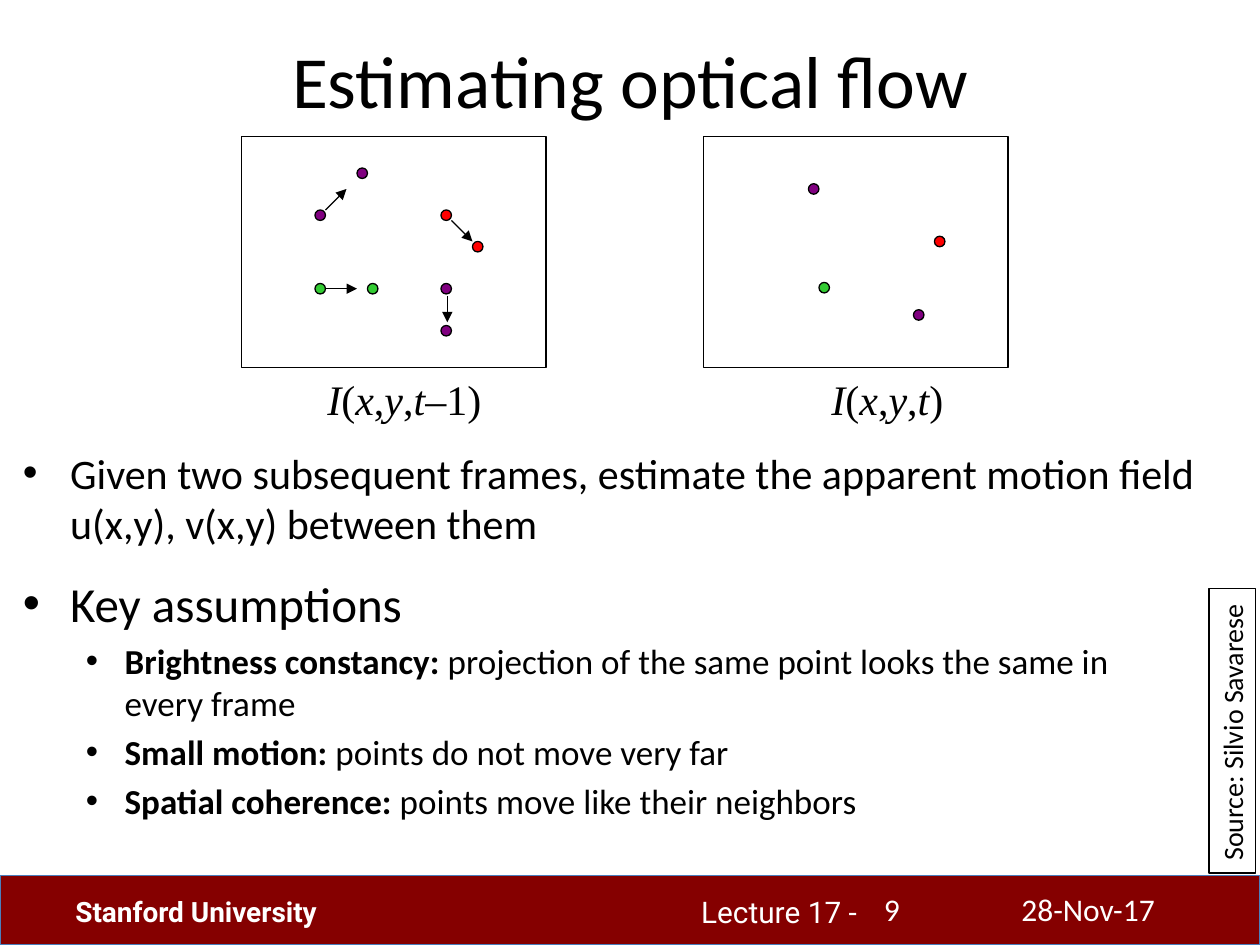
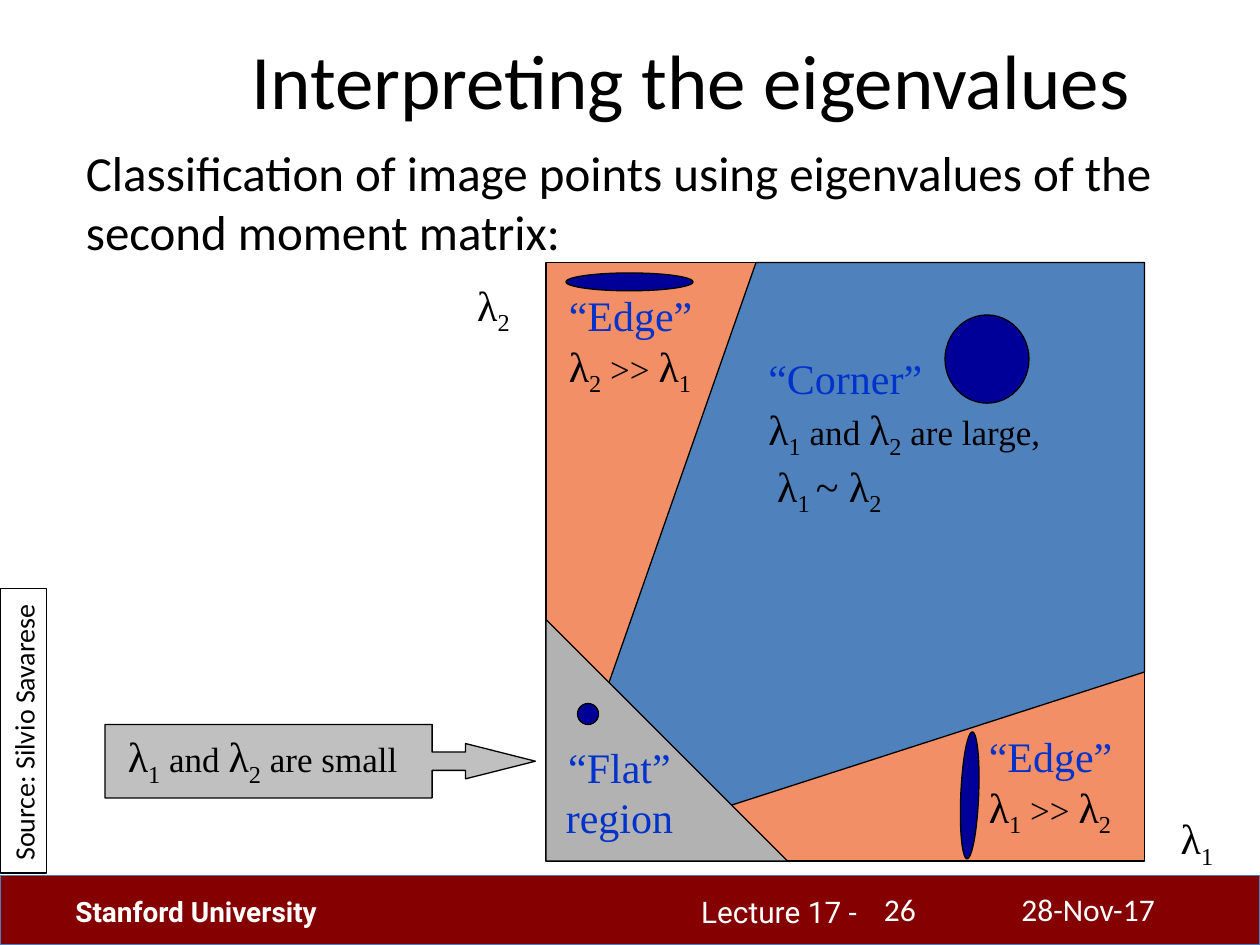
from dataclasses import dataclass
from itertools import groupby

from lxml.etree import SubElement
from pptx import Presentation
from pptx.dml.color import RGBColor
from pptx.enum.shapes import MSO_CONNECTOR as Connector, MSO_SHAPE as Preset
from pptx.enum.text import MSO_ANCHOR as Anchor, MSO_AUTO_SIZE as AutoSize, PP_ALIGN as Align
from pptx.oxml.ns import qn
from pptx.shapes.autoshape import Shape
from pptx.slide import Slide
from pptx.util import Emu, Pt

SCALE = 7620
WIDTH, HEIGHT = 1200, 900

BLACK, WHITE = "000000", "FFFFFF"
FOOTER_RED, FOOTER_EDGE = "850000", "4B7EBC"
PURPLE, RED, GREEN = "800080", "FF0000", "33CC33"
EDGE_ORANGE, CORNER_BLUE, FLAT_GRAY, CALLOUT_GRAY = "F38F67", "4F81BD", "B2B2B2", "C0C0C0"
ELLIPSE_NAVY, REGION_BLUE = "000099", "0033CC"
SANS, FOOTER_FONT, SERIF = "Calibri", "Roboto", "Times New Roman"


@dataclass(frozen=True)
class Box:
    left: int
    top: int
    width: int
    height: int

    def emu(self) -> tuple[Emu, ...]:
        return tuple(px(v) for v in (self.left, self.top, self.width, self.height))


@dataclass(frozen=True)
class Run:
    text: str
    size: float = 24
    color: str = BLACK
    font: str = SANS
    bold: bool = False
    italic: bool = False
    subscript: bool = False


@dataclass(frozen=True)
class Para:
    runs: list[Run]
    align: Align = Align.LEFT
    before: float = 0
    level: int = 0
    margin: int = 0
    hanging: int = 0


@dataclass(frozen=True)
class Dot:
    left: int
    top: int
    color: str


@dataclass(frozen=True)
class Arrow:
    start: tuple[int, int]
    end: tuple[int, int]


@dataclass(frozen=True)
class Ellipse:
    box: Box
    rotation: float = 0


@dataclass(frozen=True)
class Note:
    box: Box
    runs: list[Run]
    align: Align = Align.LEFT


FRAMES = [Box(230, 130, 290, 220), Box(670, 130, 290, 220)]
DOTS = [
    Dot(300, 200, PURPLE), Dot(420, 200, RED), Dot(300, 270, GREEN), Dot(420, 270, PURPLE),
    Dot(340, 160, PURPLE), Dot(450, 230, RED), Dot(350, 270, GREEN), Dot(420, 310, PURPLE),
    Dot(770, 175, PURPLE), Dot(890, 225, RED), Dot(780, 269, GREEN), Dot(870, 295, PURPLE),
]
DOT_SIZE = 10
ARROWS = [
    Arrow((310, 200), (330, 180)), Arrow((310, 275), (340, 275)),
    Arrow((430, 210), (450, 230)), Arrow((426, 282), (426, 307)),
]
ASSUMPTIONS = [
    ("Brightness constancy:", " projection of the same point looks the same in every frame"),
    ("Small motion:", " points do not move very far"),
    ("Spatial coherence:", " points move like their neighbors"),
]
CORNER_REGION = [(580, 650), (720, 250), (1090, 250), (1090, 640), (696, 767)]
ELLIPSES = [
    Ellipse(Box(900, 300, 80, 84)), Ellipse(Box(539, 260, 121, 17)),
    Ellipse(Box(550, 670, 20, 20)), Ellipse(Box(863, 749, 121, 17), 92.4),
]


def px(value: int) -> Emu:
    return Emu(value * SCALE)


def rgb(color: str) -> RGBColor:
    return RGBColor.from_string(color)


def paint(shape: Shape, fill: str, line: str = BLACK) -> Shape:
    shape.shadow.inherit = False
    shape.fill.solid()
    shape.fill.fore_color.rgb = rgb(fill)
    shape.line.color.rgb = rgb(line)
    shape.line.width = Pt(0.75)
    return shape


def add_preset(slide: Slide, preset: Preset, box: Box, fill: str, line: str = BLACK) -> Shape:
    return paint(slide.shapes.add_shape(preset, *box.emu()), fill, line)


def add_arrow(slide: Slide, arrow: Arrow) -> None:
    ends = [px(value) for value in (*arrow.start, *arrow.end)]
    connector = slide.shapes.add_connector(Connector.STRAIGHT, *ends)
    connector.line.color.rgb = rgb(BLACK)
    connector.line.width = Pt(0.75)
    properties = connector._element.spPr
    SubElement(properties.find(qn("a:ln")), qn("a:tailEnd"), type="triangle")
    SubElement(properties, qn("a:effectLst"))


def add_text(slide: Slide, box: Box, paras: list[Para], wrap: bool = True,
             anchor: Anchor = Anchor.TOP) -> Shape:
    shape = slide.shapes.add_textbox(*box.emu())
    frame = shape.text_frame
    frame.word_wrap = wrap
    frame.auto_size = AutoSize.NONE if wrap else AutoSize.SHAPE_TO_FIT_TEXT
    frame.vertical_anchor = anchor
    for index, para in enumerate(paras):
        paragraph = frame.add_paragraph() if index else frame.paragraphs[0]
        paragraph.alignment = para.align
        paragraph.level = para.level
        if para.before:
            paragraph.space_before = Pt(para.before)
        if para.hanging:
            properties = paragraph._p.get_or_add_pPr()
            properties.set("marL", str(px(para.margin)))
            properties.set("indent", str(px(-para.hanging)))
            SubElement(properties, qn("a:buFont"), typeface="Arial")
            SubElement(properties, qn("a:buChar"), char="•")
        for item in para.runs:
            add_run(paragraph, item)
    return shape


def add_run(paragraph, item: Run) -> None:
    for index, line in enumerate(item.text.split("\n")):
        if index:
            paragraph.add_line_break()
        if not line:
            continue
        run = paragraph.add_run()
        run.text = line
        font = run.font
        font.name, font.size = item.font, Pt(item.size)
        font.bold, font.italic = item.bold, item.italic
        font.color.rgb = rgb(item.color)
        if item.subscript:
            run._r.get_or_add_rPr().set("baseline", "-25000")


def serif(text: str, size: float = 20, color: str = BLACK) -> Run:
    return Run(text, size, color, SERIF)


def eigenvalue(index: str) -> list[Run]:
    return [serif("λ", 24), Run(index, font=SERIF, subscript=True)]


def region_name(text: str) -> Run:
    return serif(text, 24, REGION_BLUE)


def edge_label(larger: str, smaller: str) -> list[Run]:
    return [region_name("“Edge”\n"), *eigenvalue(larger), serif(" >> "), *eigenvalue(smaller)]


def formula(text: str) -> list[Run]:
    return [Run("".join(part), font=SERIF, italic=is_letter)
            for is_letter, part in groupby(text, str.isalpha)]


def add_base_slide(presentation, title: str, title_box: Box, title_size: int,
                   number: int, source_left: int) -> Slide:
    slide = presentation.slides.add_slide(presentation.slide_layouts[6])
    add_preset(slide, Preset.RECTANGLE, Box(0, 834, WIDTH, 66), FOOTER_RED, FOOTER_EDGE)
    footers = [
        Note(Box(656, 845, 293, 55), [Run("Lecture 17 -", 17, WHITE, FOOTER_FONT)]),
        Note(Box(60, 846, 290, 44), [Run("Stanford University", 16, WHITE, FOOTER_FONT, True)]),
        Note(Box(961, 842, 209, 48), [Run("28-Nov-17", 18, WHITE)]),
        Note(Box(830, 842, 132, 48), [Run(str(number), 18, WHITE)]),
    ]
    add_notes(slide, footers)
    add_text(slide, title_box, [Para([Run(title, title_size)], Align.CENTER)],
             anchor=Anchor.MIDDLE)
    source = add_text(slide, Box(source_left, 674, 271, 44),
                      [Para([Run("Source: Silvio Savarese", 16)])], wrap=False)
    source.rotation = 270
    source.line.color.rgb = rgb(BLACK)
    source.line.width = Pt(0.75)
    return slide


def add_notes(slide: Slide, notes: list[Note]) -> None:
    for note in notes:
        add_text(slide, note.box, [Para(note.runs, note.align)])


def build_optical_flow(presentation) -> None:
    slide = add_base_slide(presentation, "Estimating optical flow",
                           Box(60, 0, 1080, 150), 42, 9, 1038)
    for frame in FRAMES:
        add_preset(slide, Preset.RECTANGLE, frame, WHITE)
    for dot in DOTS:
        add_preset(slide, Preset.OVAL, Box(dot.left, dot.top, DOT_SIZE, DOT_SIZE), dot.color)
    for arrow in ARROWS:
        add_arrow(slide, arrow)
    add_notes(slide, [
        Note(Box(300, 350, 190, 60), formula("I(x,y,t–1)")),
        Note(Box(780, 350, 150, 60), formula("I(x,y,t)")),
    ])

    task = Run("Given two subsequent frames, estimate the apparent motion field "
               "u(x,y), v(x,y) between them")
    add_text(slide, Box(10, 420, 1170, 130), [Para([task], margin=45, hanging=45)])
    heading = Para([Run("Key assumptions", 28)], margin=45, hanging=45)
    points = [Para([Run(name, 20, bold=True), Run(meaning, 20)],
                   before=4, level=1, margin=97, hanging=37)
              for name, meaning in ASSUMPTIONS]
    add_text(slide, Box(10, 540, 1080, 290), [heading, *points])


def build_eigenvalues(presentation) -> None:
    slide = add_base_slide(presentation, "Interpreting the eigenvalues",
                           Box(176, 0, 964, 150), 44, 26, -113)
    callout = add_preset(slide, Preset.RIGHT_ARROW_CALLOUT, Box(100, 690, 410, 70), CALLOUT_GRAY)
    for index, value in enumerate((0.25, 0.24, 0.95, 0.76)):
        callout.adjustments[index] = value

    add_preset(slide, Preset.RECTANGLE, Box(520, 250, 570, 570), EDGE_ORANGE)
    builder = slide.shapes.build_freeform(*CORNER_REGION[0], scale=SCALE)
    builder.add_line_segments(CORNER_REGION[1:], close=True)
    paint(builder.convert_to_shape(), CORNER_BLUE)
    add_preset(slide, Preset.RIGHT_TRIANGLE, Box(520, 590, 230, 230), FLAT_GRAY)

    both = [*eigenvalue("1"), serif(" and "), *eigenvalue("2")]
    corner = [region_name("“Corner”\n"), *both, serif(" are large,\n "),
              *eigenvalue("1 "), serif("~ ", 24), *eigenvalue("2")]
    intro = Run("Classification of image points using eigenvalues of the "
                "second moment matrix:", 28)
    add_notes(slide, [
        Note(Box(1090, 768, 100, 60), eigenvalue("1"), Align.CENTER),
        Note(Box(400, 260, 140, 60), eigenvalue("2"), Align.CENTER),
        Note(Box(720, 330, 350, 156), corner),
        Note(Box(110, 690, 310, 60), [*both, serif(" are small")]),
        Note(Box(930, 690, 170, 108), edge_label("1", "2")),
        Note(Box(530, 270, 170, 108), edge_label("2", "1")),
        Note(Box(510, 700, 160, 108), [region_name("“Flat” region")], Align.CENTER),
        Note(Box(70, 130, 1050, 124), [intro]),
    ])
    for ellipse in ELLIPSES:
        shape = add_preset(slide, Preset.OVAL, ellipse.box, ELLIPSE_NAVY)
        shape.rotation = ellipse.rotation


def main() -> None:
    presentation = Presentation()
    presentation.slide_width, presentation.slide_height = px(WIDTH), px(HEIGHT)
    build_optical_flow(presentation)
    build_eigenvalues(presentation)
    presentation.save("out.pptx")


if __name__ == "__main__":
    main()
